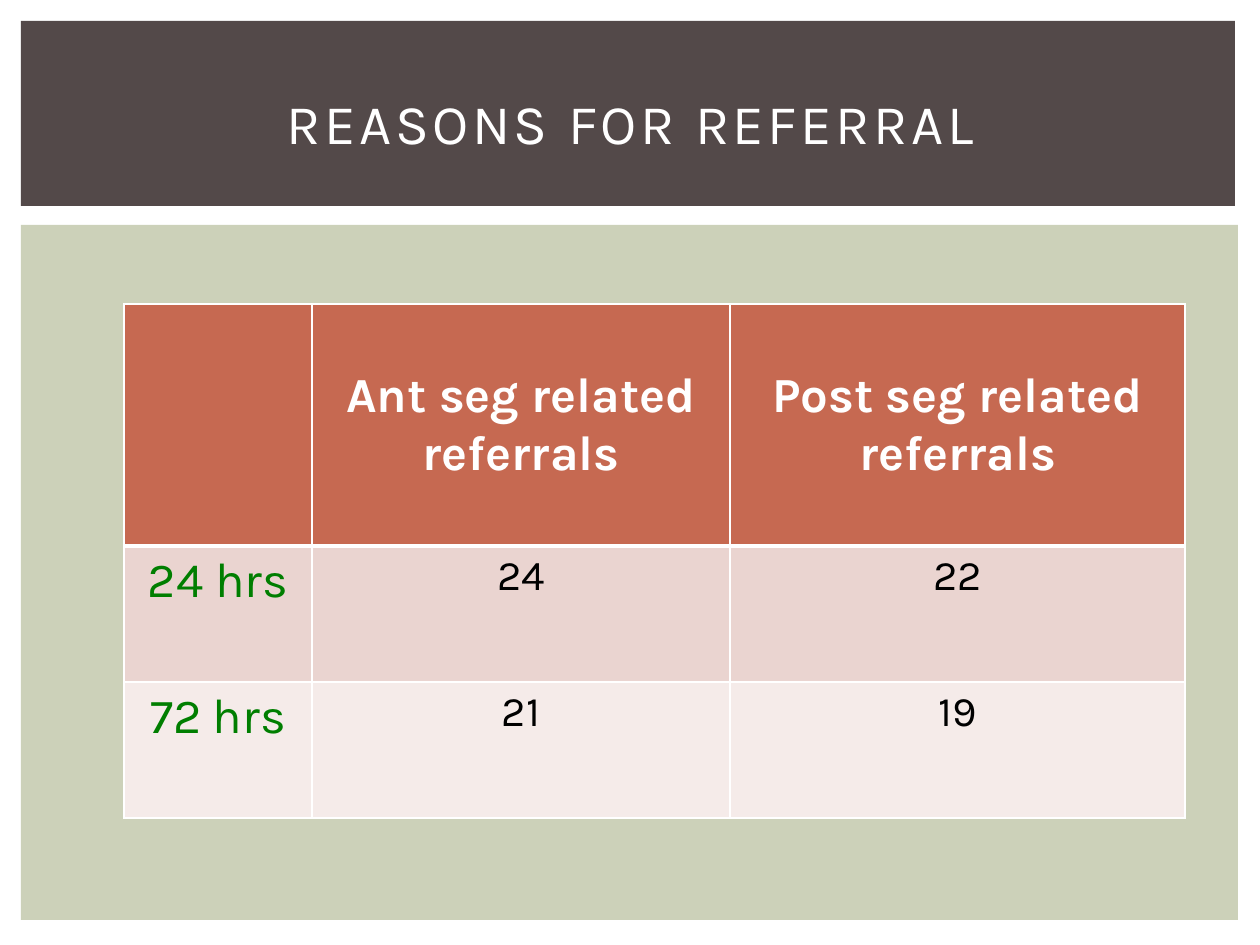
import pptx
import pptx.dml.color
import pptx.enum.shapes
import pptx.enum.text
import pptx.oxml
import pptx.oxml.ns
import pptx.util

THEME = {
    "font": "Karla",
    "banner": "534949",
    "panel": "CCD1B9",
    "white": "FFFFFF",
    "black": "000000",
    "green": "007E00",
    "row_fills": ["C66951", "EAD4D0", "F5EBE9"],
    "title_size": 32,
    "label_size": 28,
    "value_size": 24,
}
SCALE = 914400 / 126
ALIGN = pptx.enum.text.PP_ALIGN
ANCHOR = pptx.enum.text.MSO_ANCHOR


def px(length):
    return pptx.util.Emu(round(length * SCALE))


def write(frame, text, size, color, bold=False):
    paragraph = frame.paragraphs[0]
    paragraph.alignment = ALIGN.CENTER
    run = paragraph.add_run()
    run.text = text
    formats = {"name": THEME["font"], "size": pptx.util.Pt(size), "bold": bold}
    for name, value in formats.items():
        setattr(run.font, name, value)
    run.font.color.rgb = pptx.dml.color.RGBColor.from_string(THEME[color])
    return run


presentation = pptx.Presentation()
presentation.slide_width = px(1260)
presentation.slide_height = px(945)
slide = presentation.slides.add_slide(presentation.slide_layouts[5])

blocks = [("panel", (21, 225, 1217, 695)), ("banner", (21, 21, 1214, 185))]
for color, box in blocks:
    shape = slide.shapes.add_shape(
        pptx.enum.shapes.MSO_SHAPE.RECTANGLE, *map(px, box)
    )
    shape.shadow.inherit = False
    shape.fill.solid()
    shape.fill.fore_color.rgb = pptx.dml.color.RGBColor.from_string(THEME[color])
    shape.line.fill.background()

rows = [
    ["", "Ant seg related referrals", "Post seg related referrals"],
    ["24 hrs", "24", "22"],
    ["72 hrs", "21", "19"],
]
column_widths = [188, 418, 455]
row_heights = [242, 136, 136]
table = slide.shapes.add_table(
    len(rows), len(column_widths), px(124), px(304),
    px(sum(column_widths)), px(sum(row_heights)),
).table
for column, width in zip(table.columns, column_widths):
    column.width = px(width)
for row, height in zip(table.rows, row_heights):
    row.height = px(height)

for row_index, texts in enumerate(rows):
    for column_index, text in enumerate(texts):
        cell = table.cell(row_index, column_index)
        properties = cell._tc.get_or_add_tcPr()
        for side in "LRTB":
            heavy = (row_index, side) in [(0, "B"), (1, "T")]
            width = pptx.util.Pt(3 if heavy else 1)
            properties.append(pptx.oxml.parse_xml(
                f'<a:ln{side} {pptx.oxml.ns.nsdecls("a")} w="{width}"><a:solidFill>'
                f'<a:srgbClr val="{THEME["white"]}"/></a:solidFill></a:ln{side}>'
            ))
        cell.fill.solid()
        cell.fill.fore_color.rgb = pptx.dml.color.RGBColor.from_string(
            THEME["row_fills"][row_index]
        )
        if row_index == 0:
            cell.margin_top = px(64)
            style = (THEME["label_size"], "white", True)
        elif column_index == 0:
            style = (THEME["label_size"], "green")
        else:
            style = (THEME["value_size"], "black")
        if text:
            write(cell.text_frame, text, *style)

title = slide.shapes.title
title_format = {"left": 53, "top": 50, "width": 1155, "height": 145}
for name, value in title_format.items():
    setattr(title, name, px(value))
frame_format = {
    "vertical_anchor": ANCHOR.MIDDLE,
    "word_wrap": True,
    "auto_size": pptx.enum.text.MSO_AUTO_SIZE.NONE,
}
for name, value in frame_format.items():
    setattr(title.text_frame, name, value)
run = write(title.text_frame, "REASONS FOR REFERRAL", THEME["title_size"], "white")
run.font._element.set("spc", "200")
title.element.getparent().append(title.element)

presentation.save("out.pptx")
